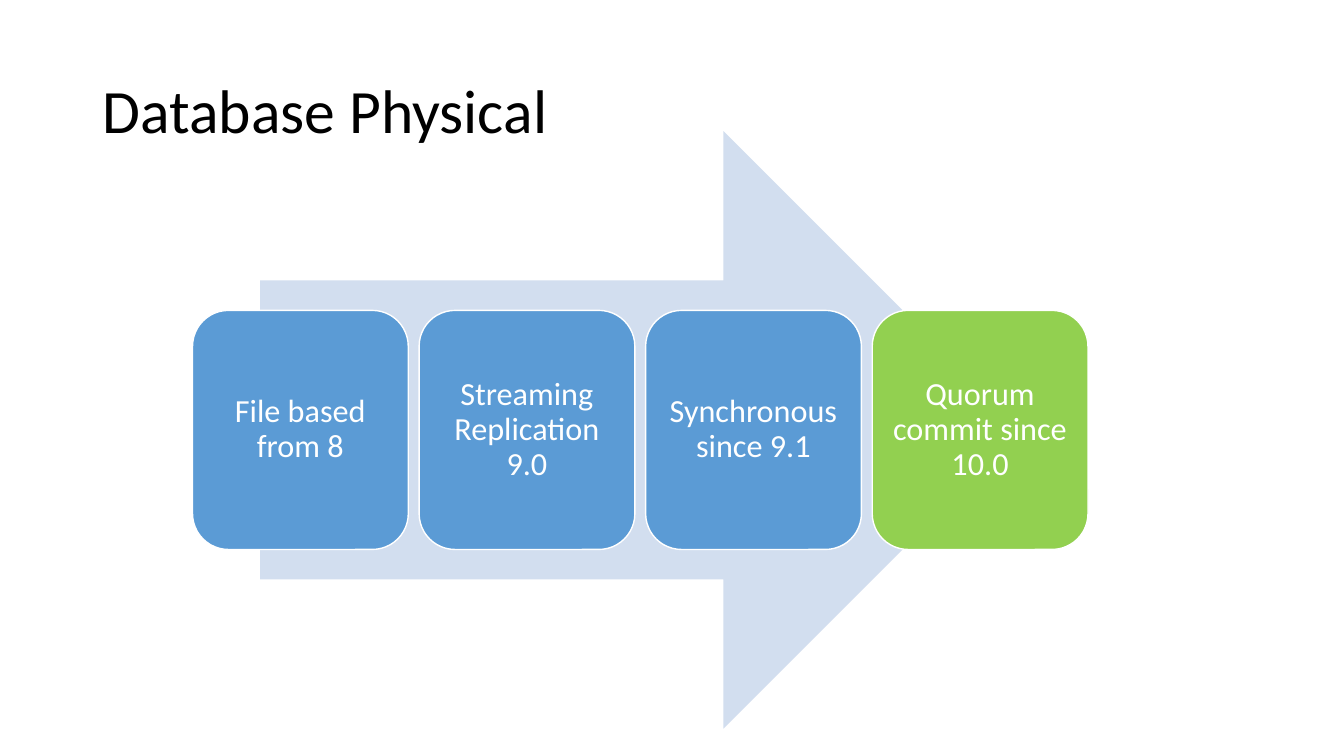
from pptx import Presentation
from pptx.dml.color import RGBColor
from pptx.enum.shapes import MSO_SHAPE
from pptx.enum.text import MSO_ANCHOR, PP_ALIGN
from pptx.util import Inches, Pt

# Content
TITLE = "Database Physical"
STEPS = [
    ("File based from 8", "5B9BD5"),
    ("Streaming Replication 9.0", "5B9BD5"),
    ("Synchronous since 9.1", "5B9BD5"),
    ("Quorum commit since 10.0", "92D050"),
]

# Layout in inches: one row of equal cards, centred on the arrow
WIDE, HIGH = 13.33, 7.5
ARROW = (2.58, 1.3, 7.56, 5.93)
LEFT, CARD, PITCH = 1.91, 2.14, 2.247
TALL = ARROW[3] * 0.4
TOP = ARROW[1] + (ARROW[3] - TALL) / 2


def color(code):
    return RGBColor.from_string(code)


def write(shape, text, size, code, align):
    frame = shape.text_frame
    frame.word_wrap = True
    frame.vertical_anchor = MSO_ANCHOR.MIDDLE
    para = frame.paragraphs[0]
    para.alignment = align
    para.line_spacing = 0.9
    run = para.add_run()
    run.text = text
    run.font.name = "Calibri"
    run.font.size = Pt(size)
    run.font.color.rgb = color(code)
    return frame


def draw(slide, kind, box, fill):
    shape = slide.shapes.add_shape(kind, *map(Inches, box))
    shape.shadow.inherit = False
    shape.fill.solid()
    shape.fill.fore_color.rgb = color(fill)
    shape.line.fill.background()
    return shape


def main():
    deck = Presentation()
    deck.slide_width, deck.slide_height = Inches(WIDE), Inches(HIGH)
    slide = deck.slides.add_slide(deck.slide_layouts[6])

    # Title
    title = slide.shapes.add_textbox(*map(Inches, (0.92, 0.4, 11.5, 1.45)))
    write(title, TITLE, 44, "000000", PP_ALIGN.LEFT)

    # Arrow behind the cards
    draw(slide, MSO_SHAPE.RIGHT_ARROW, ARROW, "D2DEEF")

    # Step cards
    for i, (text, fill) in enumerate(STEPS):
        box = (LEFT + i * PITCH, TOP, CARD, TALL)
        card = draw(slide, MSO_SHAPE.ROUNDED_RECTANGLE, box, fill)
        card.line.color.rgb = color("FFFFFF")
        card.line.width = Pt(1)
        frame = write(card, text, 23, "FFFFFF", PP_ALIGN.CENTER)
        frame.margin_left = frame.margin_right = Inches(0.1)
        frame.margin_top = frame.margin_bottom = Inches(0.1)

    deck.save("out.pptx")


if __name__ == "__main__":
    main()
